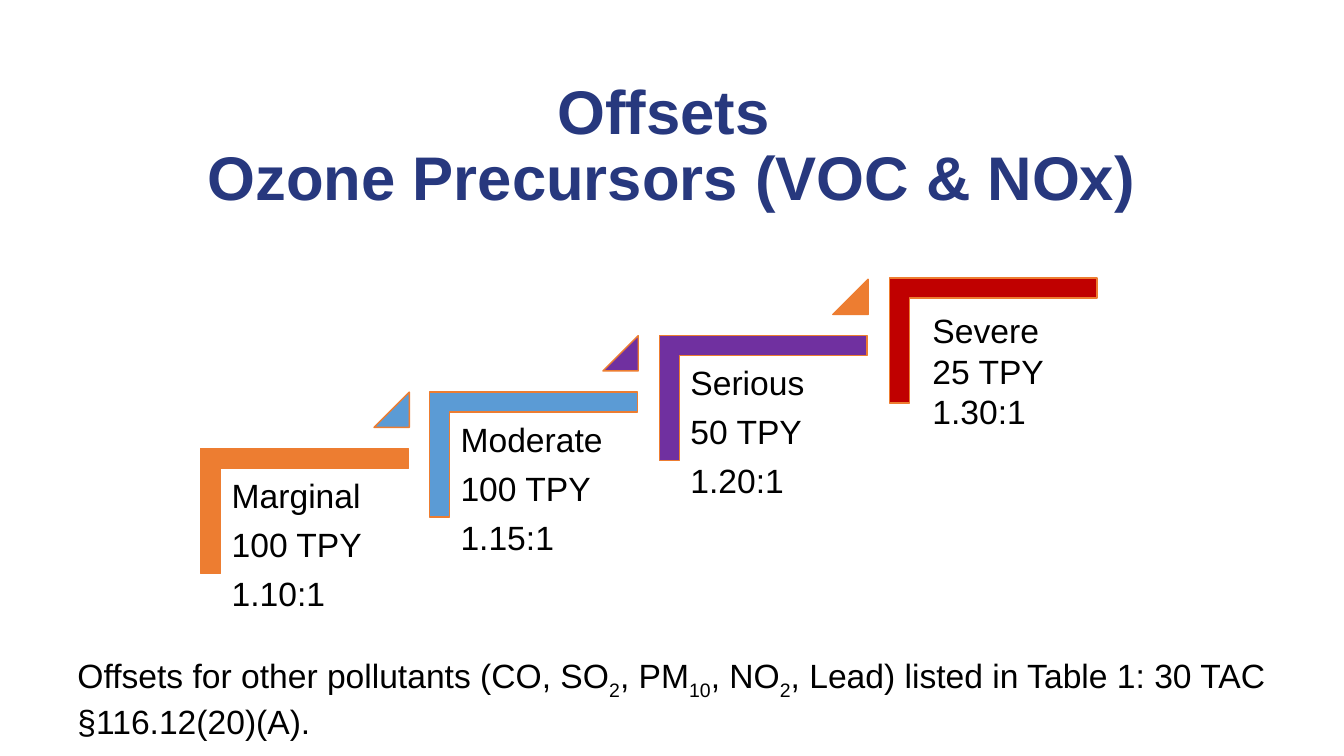
from dataclasses import dataclass

from pptx import Presentation
from pptx.dml.color import RGBColor
from pptx.enum.shapes import MSO_SHAPE
from pptx.enum.text import MSO_ANCHOR, PP_ALIGN
from pptx.util import Pt

PX = 9144
CORNER = MSO_SHAPE.CORNER
TRIANGLE = MSO_SHAPE.ISOSCELES_TRIANGLE
MIDDLE = MSO_ANCHOR.MIDDLE
CENTER = PP_ALIGN.CENTER


@dataclass(frozen=True)
class Theme:
    font: str = "Arial"
    title_size: int = 44
    body_size: int = 24
    navy: str = "27387E"
    black: str = "000000"
    orange: str = "ED7D31"
    blue: str = "5B9BD5"
    purple: str = "7030A0"
    red: str = "C00000"


theme = Theme()
presentation = Presentation()
presentation.slide_width = 1333 * PX
presentation.slide_height = 750 * PX
slide = presentation.slides.add_slide(presentation.slide_layouts[6])


def add_text(left, top, width, height, lines, size=theme.body_size, color=theme.black, bold=False):
    box = slide.shapes.add_textbox(left * PX, top * PX, width * PX, height * PX)
    frame = box.text_frame
    frame.word_wrap = True
    for number, line in enumerate(lines):
        paragraph = frame.paragraphs[0] if number == 0 else frame.add_paragraph()
        for position, text in enumerate(line):
            if text == "\n":
                paragraph.add_line_break()
                continue
            run = paragraph.add_run()
            run.text = text
            run.font.name = theme.font
            run.font.size = Pt(size)
            run.font.bold = bold
            run.font.color.rgb = RGBColor.from_string(color)
            if position % 2:
                run._r.get_or_add_rPr().set("baseline", "-25000")
    return frame


def add_step_shape(kind, left, top, width, height, color, adjustments):
    shape = slide.shapes.add_shape(kind, left * PX, top * PX, width * PX, height * PX)
    shape.shadow.inherit = False
    shape.fill.solid()
    shape.fill.fore_color.rgb = RGBColor.from_string(color)
    shape.line.color.rgb = RGBColor.from_string(theme.orange)
    shape.line.width = Pt(1)
    for index, value in enumerate(adjustments):
        shape.adjustments[index] = value
    return shape


title = add_text(67, 74, 1199, 145, [["Offsets ", "\n", "Ozone Precursors (VOC & NOx)"]],
                 theme.title_size, theme.navy, True)
title.vertical_anchor = MIDDLE
title.paragraphs[0].alignment = CENTER
title.paragraphs[0].line_spacing = 0.9

steps = [
    ("Marginal", "100 TPY", "1.10:1", theme.orange),
    ("Moderate", "100 TPY", "1.15:1", theme.blue),
    ("Serious", "50 TPY", "1.20:1", theme.purple),
    ("Severe", "25 TPY", "1.30:1", theme.red),
]
triangle_colors = [theme.blue, theme.purple, theme.orange]

for index, (level, threshold, ratio, color) in enumerate(steps):
    left = 240 + 683 * index // 3
    top = 404 - 169 * index // 3
    corner = add_step_shape(CORNER, left, top, 124, 206, color, [0.16, 0.16])
    corner.rotation = 90
    lines = [[level], [threshold], [ratio]]
    if index < len(triangle_colors):
        label = add_text(left - 20, top + 62, 186, 163, lines)
        label.margin_top = label.margin_bottom = 10 * PX
        for paragraph in label.paragraphs:
            paragraph.line_spacing = 0.9
            paragraph.space_after = Pt(9)
        add_step_shape(TRIANGLE, left + 131, top - 15, 35, 35, triangle_colors[index], [1])
    else:
        add_text(915, 303, 192, 165, lines)

add_text(67, 645, 1208, 91, [[
    "Offsets for other pollutants (CO, SO", "2", ", PM", "10", ", NO", "2",
    ", Lead) listed in Table 1: 30 TAC §116.12(20)(A).",
]])

presentation.save("out.pptx")
